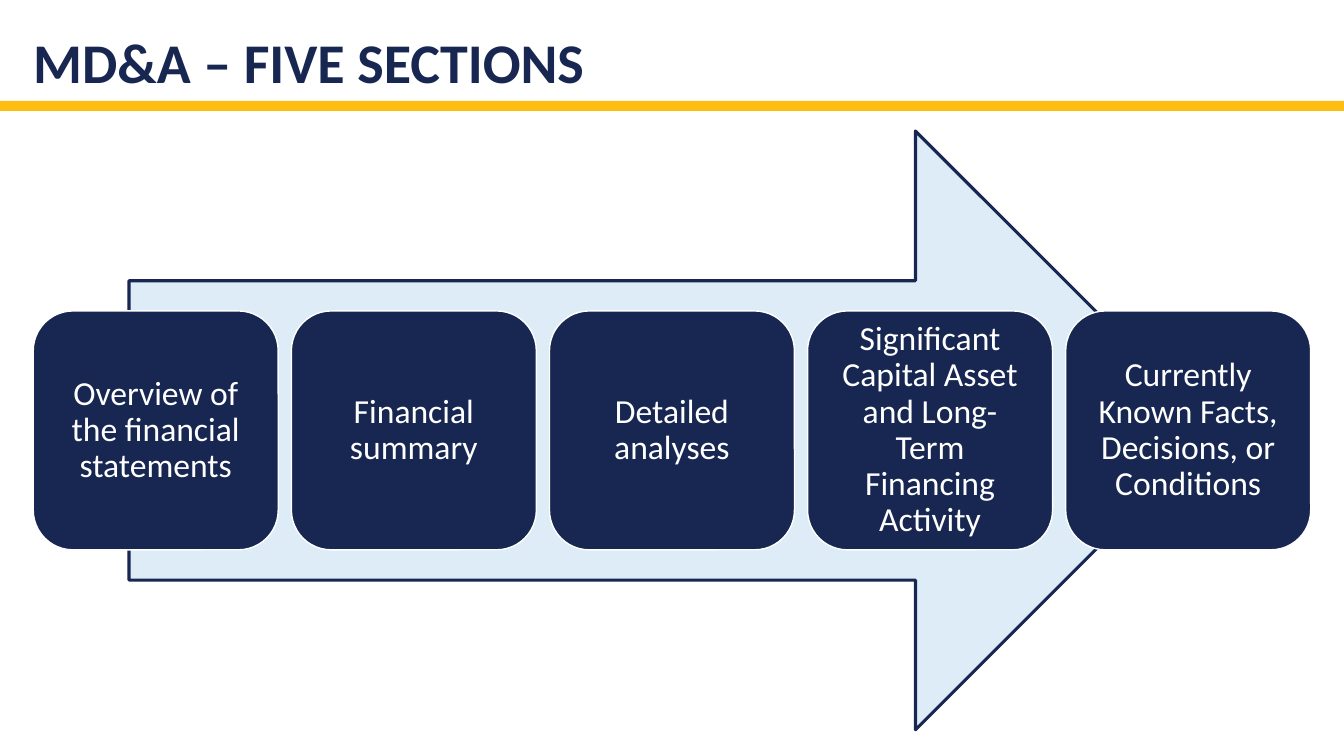
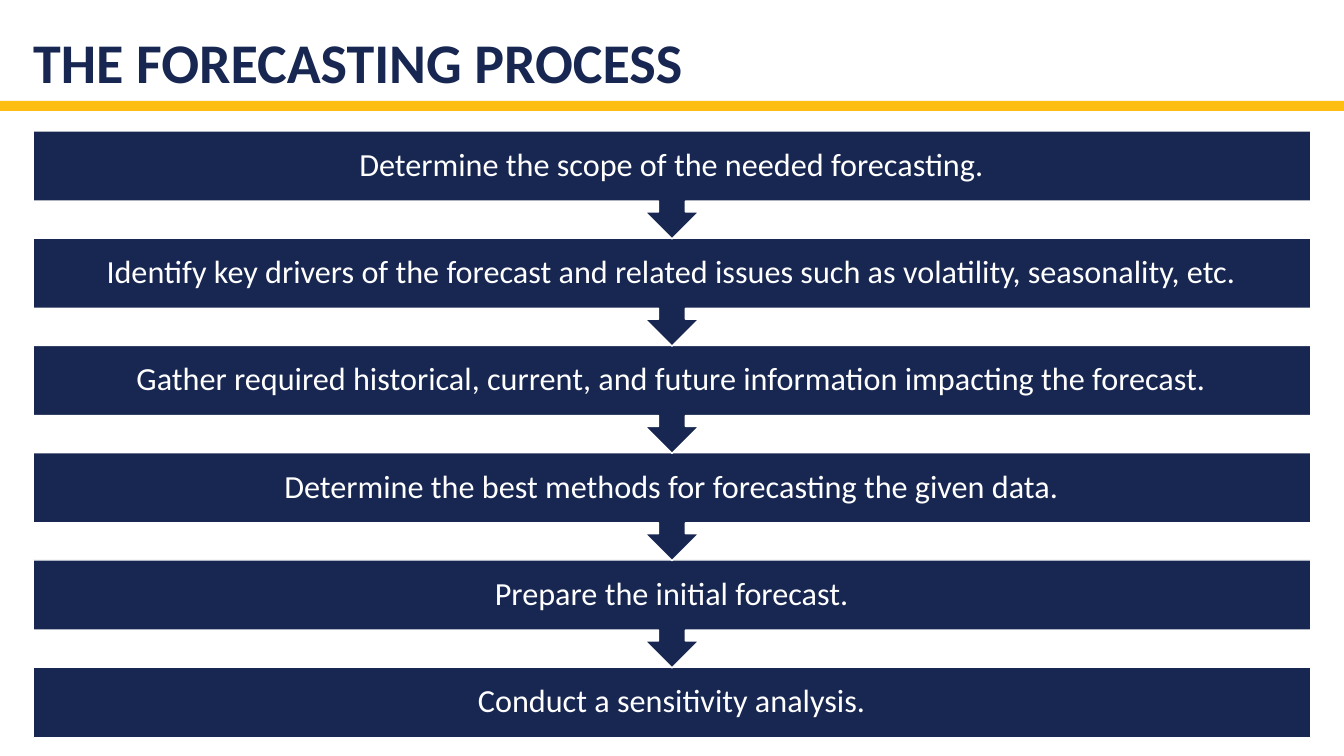
from pptx import Presentation
from pptx.dml.color import RGBColor
from pptx.enum.shapes import MSO_SHAPE as Preset
from pptx.enum.text import MSO_ANCHOR as Anchor, PP_ALIGN as Align
from pptx.util import Inches, Pt

SECTIONS_TITLE = "MD&A – FIVE SECTIONS"
SECTIONS = [
    "Overview of the financial statements",
    "Financial summary",
    "Detailed analyses",
    "Significant Capital Asset and Long-Term Financing Activity",
    "Currently Known Facts, Decisions, or Conditions",
]
PROCESS_TITLE = "THE FORECASTING PROCESS"
STEPS = [
    "Determine the scope of the needed forecasting.",
    "Identify key drivers of the forecast and related issues such as volatility, seasonality, etc.",
    "Gather required historical, current, and future information impacting the forecast.",
    "Determine the best methods for forecasting the given data.",
    "Prepare the initial forecast.",
    "Conduct a sensitivity analysis.",
]

NAVY = RGBColor(0x18, 0x27, 0x51)
GOLD = RGBColor(0xFE, 0xBD, 0x11)
PALE_BLUE = RGBColor(0xDD, 0xEC, 0xF6)
WHITE = RGBColor(0xFF, 0xFF, 0xFF)
FONT = "Calibri"

SLIDE_WIDTH, SLIDE_HEIGHT = Inches(13.33), Inches(7.5)
MARGIN = Inches(0.33)
CONTENT_WIDTH = Inches(12.67)
CONTENT_TOP = Inches(1.3)


def write(shape, text, size=24, color=WHITE, bold=False, align=Align.CENTER,
          anchor=Anchor.MIDDLE, inset_x=0.1, inset_y=0.1):
    frame = shape.text_frame
    frame.word_wrap = True
    frame.vertical_anchor = anchor
    frame.margin_left = frame.margin_right = Inches(inset_x)
    frame.margin_top = frame.margin_bottom = Inches(inset_y)
    paragraph = frame.paragraphs[0]
    paragraph.alignment = align
    paragraph.line_spacing = 0.9
    run = paragraph.add_run()
    run.text = text
    run.font.name = FONT
    run.font.size = Pt(size)
    run.font.bold = bold
    run.font.color.rgb = color


def add_block(slide, preset, left, top, width, height, fill=NAVY, line=WHITE, line_width=1):
    shape = slide.shapes.add_shape(preset, left, top, width, height)
    shape.shadow.inherit = False
    shape.fill.solid()
    shape.fill.fore_color.rgb = fill
    if line is None:
        shape.line.fill.background()
    else:
        shape.line.color.rgb = line
        shape.line.width = Pt(line_width)
    return shape


def add_titled_slide(presentation, title):
    slide = presentation.slides.add_slide(presentation.slide_layouts[6])
    add_block(slide, Preset.RECTANGLE, 0, Inches(1), SLIDE_WIDTH, Inches(0.1), GOLD, None)
    title_box = slide.shapes.add_textbox(MARGIN, 0, CONTENT_WIDTH, Inches(1))
    write(title_box, title, size=40, color=NAVY, bold=True, align=Align.LEFT,
          anchor=Anchor.BOTTOM, inset_x=0, inset_y=0.05)
    return slide


def build_sections(presentation):
    slide = add_titled_slide(presentation, SECTIONS_TITLE)
    arrow_width, arrow_height = Inches(10.77), Inches(5.94)
    add_block(slide, Preset.RIGHT_ARROW, (SLIDE_WIDTH - arrow_width) // 2, CONTENT_TOP,
              arrow_width, arrow_height, PALE_BLUE, NAVY, 2.25)
    card_width, card_height = Inches(2.43), Inches(2.37)
    pitch = (CONTENT_WIDTH - card_width) // (len(SECTIONS) - 1)
    card_top = CONTENT_TOP + (arrow_height - card_height) // 2
    for index, section in enumerate(SECTIONS):
        card = add_block(slide, Preset.ROUNDED_RECTANGLE, MARGIN + index * pitch, card_top,
                         card_width, card_height)
        write(card, section)


def build_process(presentation):
    slide = add_titled_slide(presentation, PROCESS_TITLE)
    bar_height, callout_height, pitch = Inches(0.7), Inches(1.07), Inches(1.064)
    last = len(STEPS) - 1
    for index in range(last, -1, -1):
        preset, height = ((Preset.RECTANGLE, bar_height) if index == last
                          else (Preset.DOWN_ARROW_CALLOUT, callout_height))
        bar = add_block(slide, preset, MARGIN, CONTENT_TOP + index * pitch, CONTENT_WIDTH, height)
        write(bar, STEPS[index], size=23, inset_x=0.18, inset_y=0)


def main():
    presentation = Presentation()
    presentation.slide_width, presentation.slide_height = SLIDE_WIDTH, SLIDE_HEIGHT
    build_sections(presentation)
    build_process(presentation)
    presentation.save("out.pptx")


if __name__ == "__main__":
    main()
